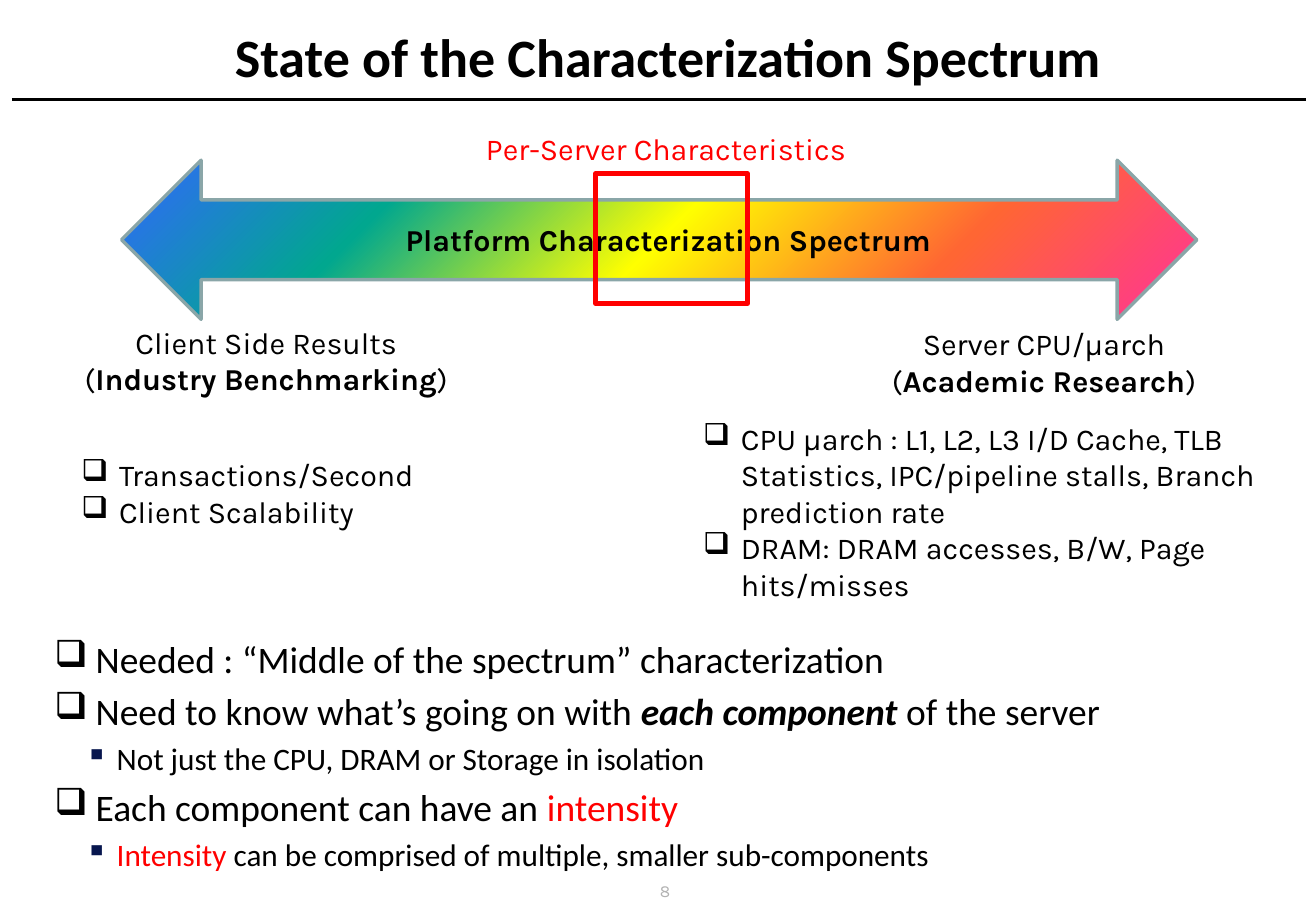
from dataclasses import dataclass

from lxml import etree
from pptx import Presentation
from pptx.dml.color import RGBColor
from pptx.enum.shapes import MSO_CONNECTOR, MSO_SHAPE
from pptx.enum.text import MSO_ANCHOR, MSO_AUTO_SIZE, PP_ALIGN
from pptx.oxml import parse_xml
from pptx.oxml.ns import nsdecls, qn
from pptx.util import Cm, Pt

LEFT, CENTER = PP_ALIGN.LEFT, PP_ALIGN.CENTER
TOP, MIDDLE = MSO_ANCHOR.TOP, MSO_ANCHOR.MIDDLE
GROW, FIXED = MSO_AUTO_SIZE.SHAPE_TO_FIT_TEXT, MSO_AUTO_SIZE.NONE
DOUBLE_ARROW, RECTANGLE = MSO_SHAPE.LEFT_RIGHT_ARROW, MSO_SHAPE.RECTANGLE
STRAIGHT = MSO_CONNECTOR.STRAIGHT


@dataclass(frozen=True)
class Theme:
    heading_font: str = "Calibri"
    label_font: str = "Karla"
    ink: str = "000000"
    accent: str = "FF0000"
    sub_bullet: str = "07164E"
    page_number: str = "B2B2B2"
    arrow_edge: str = "8AA6A8"
    spectrum: tuple = ("FF3399", "FF6633", "FFFF00", "01A78F", "3366FF")
    title_size: float = 32
    point_size: float = 22.2
    sub_point_size: float = 18.5
    label_size: float = 18
    number_size: float = 10


@dataclass(frozen=True)
class Bullet:
    mark: str
    margin: float  # cm from the box edge to the text
    hang: float  # cm from the mark to the text
    color: str = ""


THEME = Theme()
LABEL_BULLET = Bullet("❑", 0.79, 0.79)
POINT_BULLET = Bullet("❑", 0.86, 0.86)
SUB_BULLET = Bullet("▪", 1.3, 0.66, THEME.sub_bullet)


def rgb(value):
    return RGBColor.from_string(value)


def add_bullet(paragraph, bullet):
    props = paragraph._p.get_or_add_pPr()
    props.set("marL", str(Cm(bullet.margin)))
    props.set("indent", str(-Cm(bullet.hang)))
    if bullet.color:
        mark_color = etree.SubElement(props, qn("a:buClr"))
        etree.SubElement(mark_color, qn("a:srgbClr")).set("val", bullet.color)
    etree.SubElement(props, qn("a:buChar")).set("char", bullet.mark)


def write(slide, box, paragraphs, font=THEME.label_font, size=THEME.label_size,
          color=THEME.ink, bold=False, align=LEFT, anchor=TOP, fit=GROW,
          bullet=None, gap=0):
    """Each paragraph is (runs, format); each run is (text, format)."""
    frame = slide.shapes.add_textbox(*map(Cm, box)).text_frame
    frame.word_wrap = True
    frame.auto_size = fit
    frame.vertical_anchor = anchor
    for index, (runs, style) in enumerate(paragraphs):
        paragraph = frame.paragraphs[0] if index == 0 else frame.add_paragraph()
        paragraph.alignment = align
        if index and gap:
            paragraph.space_before = Pt(gap)
        mark = style.get("bullet", bullet)
        if mark:
            add_bullet(paragraph, mark)
        for text, look in runs:
            run = paragraph.add_run()
            run.text = text
            run.font.name = font
            run.font.size = Pt(style.get("size", size))
            run.font.bold = look.get("bold", bold)
            run.font.italic = look.get("italic", False)
            run.font.color.rgb = rgb(look.get("color", color))


def plain(*lines):
    return [([(line, {})], {}) for line in lines]


def add_outlined(slide, kind, box, color, weight):
    shape = slide.shapes.add_shape(kind, *map(Cm, box))
    shape.shadow.inherit = False
    shape.fill.background()
    shape.line.color.rgb = rgb(color)
    shape.line.width = Pt(weight)
    return shape


def fill_spectrum(shape):
    step = 100000 // (len(THEME.spectrum) - 1)
    stops = "".join(f'<a:gs pos="{i * step}"><a:srgbClr val="{color}"/></a:gs>'
                    for i, color in enumerate(THEME.spectrum))
    gradient = parse_xml(
        f'<a:gradFill {nsdecls("a")} rotWithShape="1"><a:gsLst>{stops}</a:gsLst>'
        '<a:path path="circle"><a:fillToRect l="100000" t="100000"/></a:path>'
        '</a:gradFill>')
    props = shape._element.spPr
    props.replace(props.find(qn("a:noFill")), gradient)


def draw_header(slide, box, title):
    x, y, width, height = box
    # Rule below the title
    rule_y = Cm(y + height + 0.05)
    rule = slide.shapes.add_connector(STRAIGHT, Cm(x - 0.18), rule_y,
                                      Cm(x + width - 0.2), rule_y)
    rule.line.color.rgb = rgb(THEME.ink)
    rule.line.width = Pt(2.25)
    etree.SubElement(rule._element.spPr, qn("a:effectLst"))
    # Title
    write(slide, box, plain(title), font=THEME.heading_font,
          size=THEME.title_size, bold=True, align=CENTER, anchor=MIDDLE, fit=FIXED)


def draw_spectrum(slide, box):
    x, y, _, _ = box
    # Arrow and its name
    fill_spectrum(add_outlined(slide, DOUBLE_ARROW, box, THEME.arrow_edge, 2))
    write(slide, (x + 5.69, y + 1.15, 14.2, 1.02),
          plain("Platform Characterization Spectrum"), bold=True)
    # Highlighted middle and its label
    add_outlined(slide, RECTANGLE, (x + 9.91, y + 0.28, 3.18, 2.72),
                 THEME.accent, 2.75)
    write(slide, (x + 7.37, y - 0.76, 8.26, 1.02),
          plain("Per-Server Characteristics"), color=THEME.accent)


def draw_spectrum_end(slide, box, side, field, metrics, heading, metric_offset):
    x, y, width, height = box
    heading_dx, heading_width = heading
    dx, dy = metric_offset
    # Side and field
    write(slide, (x + heading_dx, y, heading_width, 1.8),
          plain(side) + [([("(", {}), (field, {"bold": True}), (")", {})], {})],
          align=CENTER)
    # Metrics
    write(slide, (x + dx, y + dy, width - dx, height - dy), plain(*metrics),
          bullet=LABEL_BULLET)


def draw_takeaways(slide, box):
    sub_point = {"bullet": SUB_BULLET, "size": THEME.sub_point_size}
    red = {"color": THEME.accent}
    points = [
        ([("Needed : “Middle of the spectrum” characterization", {})], {}),
        ([("Need to know what’s going on with ", {}),
          ("each component", {"bold": True, "italic": True}),
          (" of the server", {})], {}),
        ([("Not just the CPU, DRAM or Storage in isolation", {})], sub_point),
        ([("Each component can have an ", {}), ("intensity", red)], {}),
        ([("Intensity", red),
          (" can be comprised of multiple, smaller sub-components", {})], sub_point),
    ]
    write(slide, box, points, font=THEME.heading_font, size=THEME.point_size,
          bullet=POINT_BULLET, gap=4, fit=FIXED)


def draw_page_number(slide, box, number):
    write(slide, box, plain(number), size=THEME.number_size,
          color=THEME.page_number, align=CENTER, fit=FIXED)


def main():
    deck = Presentation()
    deck.slide_width, deck.slide_height = Cm(27.51), Cm(19.05)
    slide = deck.slides.add_slide(deck.slide_layouts[6])
    draw_page_number(slide, (12.65, 18.29, 2.51, 0.64), "8")
    draw_header(slide, (0.43, 0.3, 27.08, 1.73),
                "State of the Characterization Spectrum")
    draw_takeaways(slide, (0.89, 13.18, 25.7, 5.11))
    draw_spectrum(slide, (2.54, 3.35, 22.48, 3.33))
    draw_spectrum_end(
        slide, (0.98, 6.65, 8.83, 4.57), "Client Side Results",
        "Industry Benchmarking", ["Transactions/Second", "Client Scalability"],
        heading=(0, 9.17), metric_offset=(0.47, 2.77))
    draw_spectrum_end(
        slide, (14.45, 6.68, 12.42, 6.09), "Server CPU/µarch", "Academic Research",
        ["CPU µarch : L1, L2, L3 I/D Cache, TLB Statistics, IPC/pipeline stalls, "
         "Branch prediction rate", "DRAM: DRAM accesses, B/W, Page hits/misses"],
        heading=(3.58, 7.59), metric_offset=(0, 1.98))
    deck.save("out.pptx")


if __name__ == "__main__":
    main()
